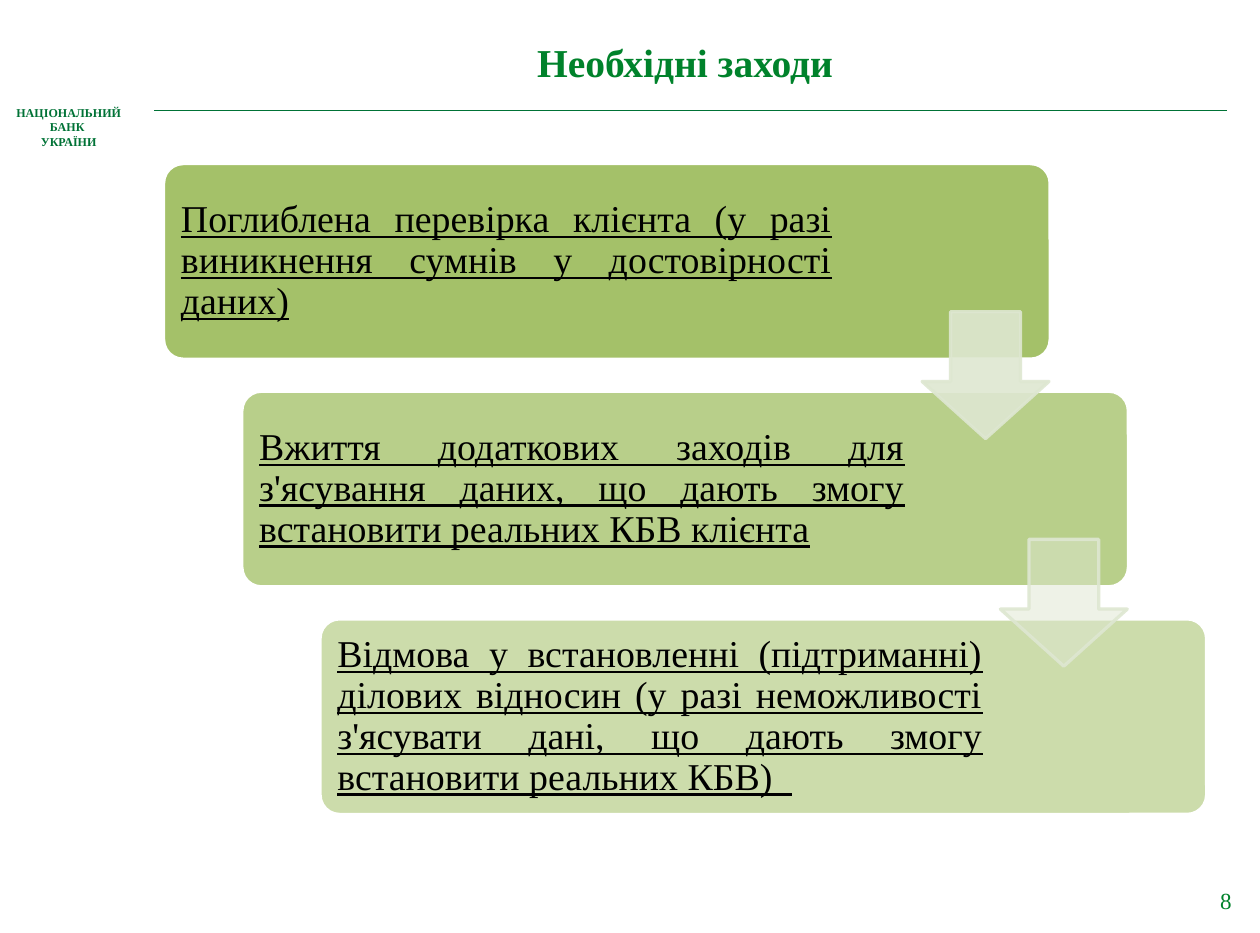
from lxml import etree
from pptx import Presentation
from pptx import util as u
from pptx.dml.color import RGBColor
from pptx.enum import shapes, text
from pptx.oxml.ns import qn

PX = 9144
FONT = "Times New Roman"
COLORS = {
    "title": "00822B",
    "brand": "007236",
    "step": "9BBB59",
    "arrow": "DEE7D1",
    "edge": "FFFFFF",
    "ink": "000000",
}
STEPS = [
    ("Поглиблена перевірка клієнта (у разі виникнення сумнів у достовірності даних)", 90, 179),
    ("Вжиття додаткових заходів для з'ясування даних, що дають змогу встановити реальних КБВ клієнта", 70, 184),
    ("Відмова у встановленні (підтриманні) ділових відносин (у разі неможливості "
     "з'ясувати дані, що дають змогу встановити реальних КБВ)  ", 50, 184),
]
ARROW_ALPHAS = [90, 50]


def px(*lengths):
    """Turn px lengths into EMU."""
    return [u.Emu(length * PX) for length in lengths]


def rgb(name):
    """Look up a colour of the palette."""
    return RGBColor.from_string(COLORS[name])


def set_alpha(fill_parent, percent):
    """Make the solid fill under an element partly transparent."""
    color = fill_parent.find(qn("a:solidFill"))[0]
    etree.SubElement(color, qn("a:alpha")).set("val", str(percent * 1000))


def set_frame(frame, anchor, margins):
    """Set wrapping, anchor and left, top, right, bottom margins."""
    frame.word_wrap = True
    frame.auto_size = text.MSO_AUTO_SIZE.NONE
    frame.vertical_anchor = anchor
    (frame.margin_left, frame.margin_top,
     frame.margin_right, frame.margin_bottom) = px(*margins)


def style_text(frame, size, color, align, bold=False, underline=False):
    """Align every paragraph and format its runs."""
    for para in frame.paragraphs:
        para.alignment = align
        for span in para.runs:
            span.font.name = FONT
            span.font.size = u.Pt(size)
            span.font.bold = bold
            span.font.underline = underline
            span.font.color.rgb = rgb(color)


def add_label(page, box, words, size, color, align, anchor, bold=False):
    """Place a text box in the given box."""
    frame = page.shapes.add_textbox(*px(*box)).text_frame
    set_frame(frame, anchor, (10, 5, 10, 5))
    frame.text = words
    style_text(frame, size, color, align, bold)


def add_filled(page, kind, box, fill, alpha, edge, adjustments):
    """Place a preset shape with a transparent fill and a 2 pt outline."""
    shape = page.shapes.add_shape(kind, *px(*box))
    shape.shadow.inherit = False
    for index, value in enumerate(adjustments):
        shape.adjustments[index] = value
    shape.fill.solid()
    shape.fill.fore_color.rgb = rgb(fill)
    set_alpha(shape.fill._xPr, alpha)
    shape.line.color.rgb = rgb(edge)
    shape.line.width = u.Pt(2)
    return shape


def add_header(page, left, top, width, height):
    """Build the title, the rule and the institution name."""
    title = page.shapes.title
    title.left, title.top, title.width, title.height = px(left + 129, top, 892, 104)
    title.text_frame.text = "Необхідні заходи"
    set_frame(title.text_frame, text.MSO_ANCHOR.MIDDLE, (0, 0, 0, 0))
    style_text(title.text_frame, 24, "title", text.PP_ALIGN.CENTER, bold=True)

    rule_y = top + 93
    rule = page.shapes.add_connector(
        shapes.MSO_CONNECTOR.STRAIGHT, *px(left + width, rule_y, left + 127, rule_y))
    rule.line.color.rgb = rgb("brand")
    rule.line.width = u.Pt(0.75)
    etree.SubElement(rule._element.spPr, qn("a:effectLst"))

    add_label(page, (left, top + height - 47, 110, 47),
              "НАЦІОНАЛЬНИЙ \nБАНК \nУКРАЇНИ", 7.3, "brand",
              text.PP_ALIGN.CENTER, text.MSO_ANCHOR.TOP, bold=True)


def add_staircase(page, left, top, width, height):
    """Build the descending steps and the arrows between them."""
    step_width, step_height = 748, 165
    dx = (width - step_width) // (len(STEPS) - 1)
    dy = (height - step_height) // (len(STEPS) - 1)
    for index, (words, alpha, right_margin) in enumerate(STEPS):
        box = (left + index * dx, top + index * dy, step_width, step_height)
        step = add_filled(page, shapes.MSO_SHAPE.ROUNDED_RECTANGLE, box,
                          "step", alpha, "edge", [0.1])
        frame = step.text_frame
        set_frame(frame, text.MSO_ANCHOR.MIDDLE, (10, 10, right_margin, 10))
        frame.text = words
        frame.paragraphs[0].line_spacing = 0.9
        style_text(frame, 23, "ink", text.PP_ALIGN.JUSTIFY, underline=True)
    for index, alpha in enumerate(ARROW_ALPHAS):
        box = (left + index * dx + 640, top + index * dy + 125, 107, 107)
        arrow = add_filled(page, shapes.MSO_SHAPE.DOWN_ARROW, box,
                           "arrow", alpha, "arrow", [0.55, 0.45])
        set_alpha(arrow._element.spPr.find(qn("a:ln")), 90)


def main():
    """Build the slide and save the deck."""
    deck = Presentation()
    deck.slide_width, deck.slide_height = px(1063, 787)
    page = deck.slides.add_slide(deck.slide_layouts[5])
    add_header(page, 3, 0, 1032, 131)
    add_staircase(page, 138, 138, 880, 550)
    add_label(page, (957, 724, 92, 52), "8", 14, "title",
              text.PP_ALIGN.RIGHT, text.MSO_ANCHOR.BOTTOM)
    deck.save("out.pptx")


if __name__ == "__main__":
    main()
